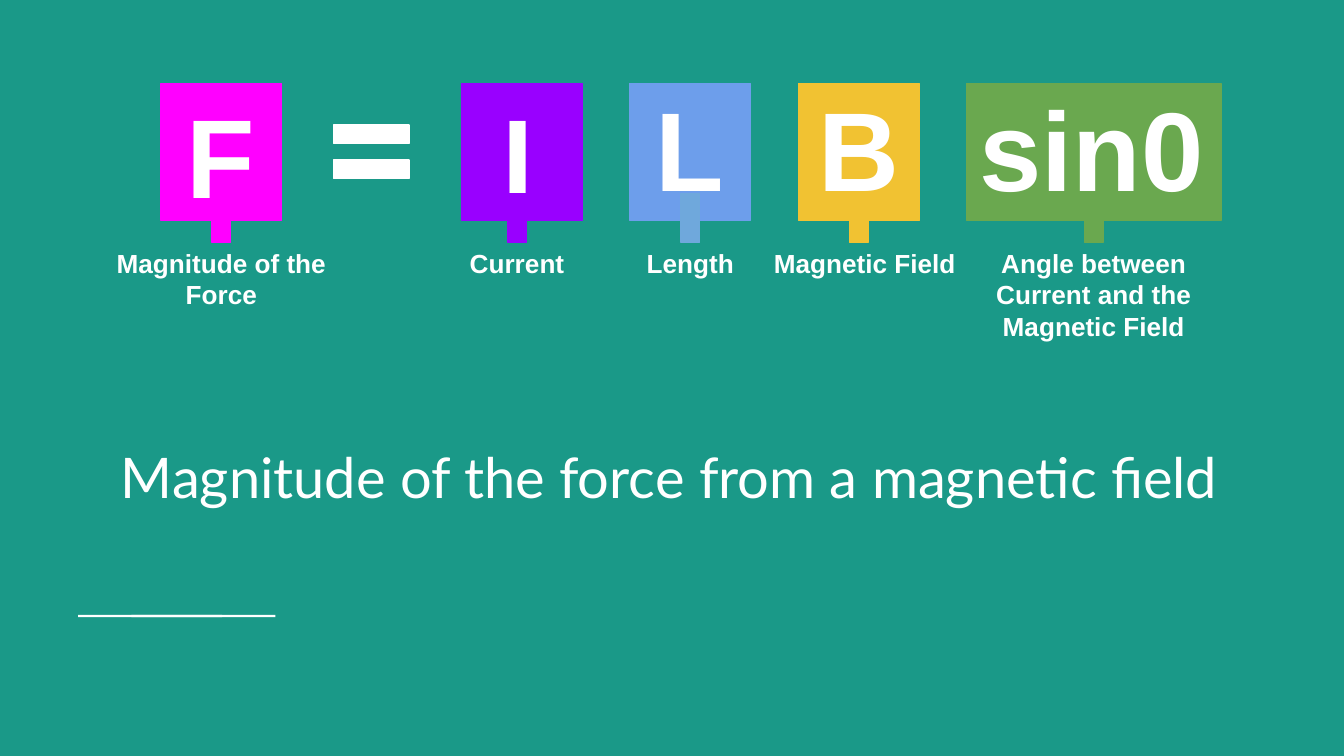
from dataclasses import dataclass

from lxml import etree
from pptx import Presentation
from pptx.dml.color import RGBColor
from pptx.enum.shapes import MSO_SHAPE
from pptx.enum.text import MSO_ANCHOR, PP_ALIGN
from pptx.util import Pt

RECTANGLE = MSO_SHAPE.RECTANGLE
TOP = MSO_ANCHOR.TOP
LEFT, CENTER = PP_ALIGN.LEFT, PP_ALIGN.CENTER


@dataclass(frozen=True)
class Theme:
    """Colours, fonts and type sizes of the slide."""
    background: str = "1A9988"
    white: str = "FFFFFF"
    force: str = "FF00FF"
    current: str = "9900FF"
    length: str = "6D9EEB"
    length_stem: str = "6FA8DC"
    field: str = "F1C232"
    angle: str = "6AA84F"
    formula_font: str = "Arial"
    body_font: str = "Lato"
    symbol_size: float = 60
    body_size: float = 30
    label_size: float = 14
    outline: float = 0.75


@dataclass(frozen=True)
class Term:
    """One factor of the formula, with shifts from its tile in points."""
    symbol: str
    label: str
    color: str
    stem_color: str
    left: float
    width: float = 64.8
    symbol_shift: tuple = (0, 0)
    stem_shift: float = 0
    label_shift: float = 0
    label_width: float = 120


THEME = Theme()
TERMS = (
    Term("F", "Magnitude of the Force", THEME.force, THEME.force, 86.2,
         symbol_shift=(6.5, -5.8), label_width=140),
    Term("I", "Current", THEME.current, THEME.current, 247.2,
         symbol_shift=(15, -5.8), stem_shift=-2.4, label_shift=-2.6),
    Term("L", "Length", THEME.length, THEME.length_stem, 337.4,
         symbol_shift=(6.5, -9.4)),
    Term("B", "Magnetic Field", THEME.field, THEME.field, 427.7,
         symbol_shift=(3.6, -9.4), label_shift=3.2),
    Term("sin0", "Angle between Current and the Magnetic Field",
         THEME.angle, THEME.angle, 517.7, width=136.4,
         symbol_shift=(0, -9.4)),
)


def add_block(slide, box, color, outline=THEME.outline):
    """Add a flat rectangle, outlined in its own colour if outline is set."""
    shape = slide.shapes.add_shape(RECTANGLE, *map(Pt, box))
    shape.shadow.inherit = False
    shape.fill.solid()
    shape.fill.fore_color.rgb = RGBColor.from_string(color)
    if outline:
        shape.line.color.rgb = RGBColor.from_string(color)
        shape.line.width = Pt(outline)
    else:
        shape.line.fill.background()


def write_text(shape, text, *, size, font=THEME.formula_font, bold=False,
               color=THEME.white, align=LEFT, spacing=1.0, after=0):
    """Write one formatted paragraph into a shape."""
    frame = shape.text_frame
    frame.word_wrap = True
    frame.vertical_anchor = TOP
    frame.margin_left = frame.margin_right = Pt(7.2)
    frame.margin_top = frame.margin_bottom = Pt(7.2)
    paragraph = frame.paragraphs[0]
    paragraph.alignment = align
    paragraph.line_spacing = spacing
    paragraph.space_before, paragraph.space_after = Pt(0), Pt(after)
    run = paragraph.add_run()
    run.text = text
    run.font.name, run.font.size, run.font.bold = font, Pt(size), bold
    run.font.color.rgb = RGBColor.from_string(color)


def add_label(slide, box, text, **text_format):
    """Add a text box with bold formula lettering."""
    shape = slide.shapes.add_textbox(*map(Pt, box))
    write_text(shape, text, bold=True, **text_format)


def add_term(slide, box, term):
    """Add a tile with its symbol, stem and label."""
    left, top, width, height = box
    center = left + width / 2
    shift_x, shift_y = term.symbol_shift
    add_block(slide, box, term.color)
    add_label(slide, (left + shift_x, top + shift_y, width, height),
              term.symbol, size=THEME.symbol_size)
    label_left = center + term.label_shift - term.label_width / 2
    add_label(slide, (label_left, top + 80.6, term.label_width, 49),
              term.label, size=THEME.label_size, align=CENTER)
    add_block(slide, (center + term.stem_shift - 5, top + 59.2, 10, 26),
              term.stem_color)


def add_equals(slide, box):
    """Add an equals sign made of two bars at the box edges."""
    left, top, width, height = box
    thickness = 10
    for bar_top in (top, top + height - thickness):
        add_block(slide, (left, bar_top, width, thickness), THEME.white)


def add_formula(slide, top, height):
    """Add the row of terms and the equals sign."""
    add_equals(slide, (178.7, top + 22.3, 40.4, 28.8))
    for term in TERMS:
        add_term(slide, (term.left, top, term.width, height), term)


def add_accent(slide, box):
    """Add a thin rule of two overlapping bars."""
    left, top, width, height = box
    bar_width = width * 0.73
    for bar_left in (left, left + width - bar_width):
        add_block(slide, (bar_left, top, bar_width, height), THEME.white,
                  outline=0)


def add_statement(slide, box, text):
    """Move the body placeholder into the box and fill it."""
    body = slide.placeholders[1]
    body.left, body.top, body.width, body.height = map(Pt, box)
    write_text(body, text, size=THEME.body_size, font=THEME.body_font,
               spacing=1.15, after=16)
    properties = body.text_frame.paragraphs[0]._p.get_or_add_pPr()
    properties.set("marL", "0")
    properties.set("indent", "0")
    namespace = properties.nsmap["a"]
    etree.SubElement(properties, f"{{{namespace}}}buNone")


def main():
    """Build the slide and save it."""
    presentation = Presentation()
    presentation.slide_width, presentation.slide_height = Pt(720), Pt(405)
    slide = presentation.slides.add_slide(presentation.slide_layouts[2])
    title = slide.shapes.title.element
    title.getparent().remove(title)
    slide.background.fill.solid()
    background = RGBColor.from_string(THEME.background)
    slide.background.fill.fore_color.rgb = background
    add_accent(slide, (41.8, 329.4, 105.8, 1.3))
    add_statement(slide, (57.6, 224.6, 605.5, 124.6),
                  "Magnitude of the force from a magnetic field")
    add_formula(slide, 44.7, 73.4)
    presentation.save("out.pptx")


if __name__ == "__main__":
    main()
